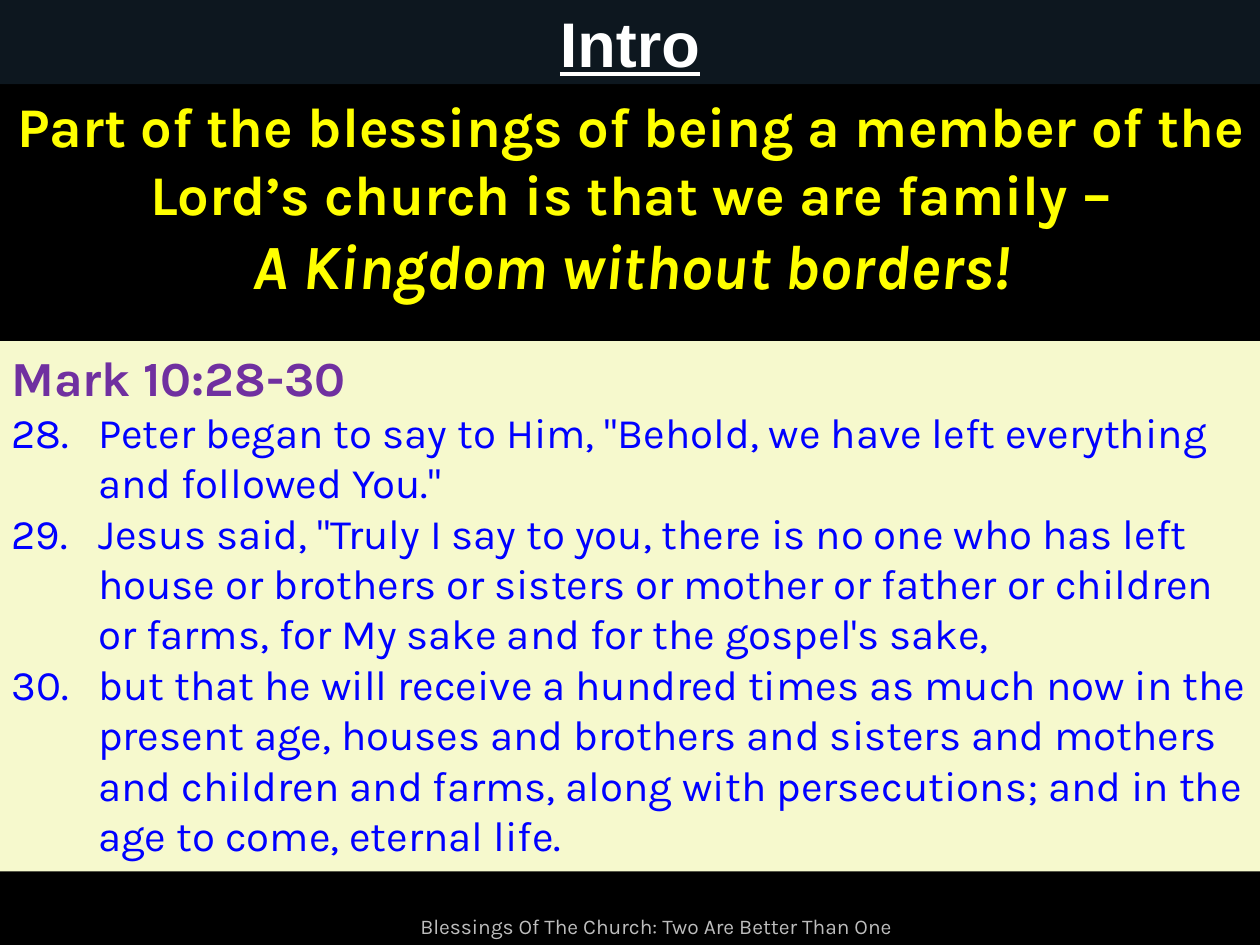
import pptx
import pptx.dml.color
import pptx.enum.shapes
import pptx.enum.text
import pptx.util
from pptx.util import Cm

ALIGN = pptx.enum.text.PP_ALIGN
ANCHOR = pptx.enum.text.MSO_ANCHOR

WIDTH, HEIGHT = 25.4, 19.05
YELLOW, PURPLE, BLUE = "FFFF00", "7030A0", "0000FF"

TITLE = "Intro"
MESSAGE = [
    ("Part of the blessings of being a member of the Lord’s church is that we are family –", 32, False),
    ("A Kingdom without borders!", 36, True),
]
PASSAGE = "Mark 10:28-30"
VERSES = [
    (28, "Peter began to say to Him, \"Behold, we have left everything and followed You.\""),
    (29, "Jesus said, \"Truly I say to you, there is no one who has left house or brothers "
         "or sisters or mother or father or children or farms, for My sake and for the gospel's sake,"),
    (30, "but that he will receive a hundred times as much now in the present age, houses "
         "and brothers and sisters and mothers and children and farms, along with persecutions; "
         "and in the age to come, eternal life."),
]
FOOTER = "Blessings Of The Church: Two Are Better Than One"


def paint(target, color):
    target.solid()
    target.fore_color.rgb = pptx.dml.color.RGBColor.from_string(color)


def add_box(page, left, top, width, height, fill=None, anchor=ANCHOR.TOP):
    place = [Cm(length) for length in (left, top, width, height)]
    if fill:
        box = page.shapes.add_shape(pptx.enum.shapes.MSO_SHAPE.RECTANGLE, *place)
        box.shadow.inherit = False
        paint(box.fill, fill)
        box.line.fill.background()
    else:
        box = page.shapes.add_textbox(*place)
    box.text_frame.word_wrap = True
    box.text_frame.vertical_anchor = anchor
    return box


def add_text(box, text, size, color, font="Karla", bold=False, italic=False,
             underline=False, align=ALIGN.CENTER, hanging=0):
    frame = box.text_frame
    para = frame.add_paragraph() if frame.text else frame.paragraphs[0]
    para.alignment = align
    if hanging:
        properties = para._p.get_or_add_pPr()
        properties.set("marL", str(Cm(hanging)))
        properties.set("indent", str(-Cm(hanging)))
    span = para.add_run()
    span.text = text
    span.font.name = font
    span.font.size = pptx.util.Pt(size)
    span.font.bold = bold
    span.font.italic = italic
    span.font.underline = underline
    paint(span.font.fill, color)


def main():
    deck = pptx.Presentation()
    deck.slide_width, deck.slide_height = Cm(WIDTH), Cm(HEIGHT)
    page = deck.slides.add_slide(deck.slide_layouts[6])
    paint(page.background.fill, "000000")

    footer = add_box(page, 8.05, 18.21, 10.36, 0.84, anchor=ANCHOR.BOTTOM)
    add_text(footer, FOOTER, 12, "BDBDBD")

    title = add_box(page, 0, 0, WIDTH, 1.7, fill="0D171F", anchor=ANCHOR.MIDDLE)
    add_text(title, TITLE, 36, "FFFFFF", font="Arial", bold=True, underline=True)

    message = add_box(page, 0.03, 1.73, WIDTH, 4.52)
    for text, size, italic in MESSAGE:
        add_text(message, text, size, YELLOW, bold=True, italic=italic)

    scripture = add_box(page, -0.02, 6.88, WIDTH + 0.02, 10.69, fill="F6F9CD")
    add_text(scripture, PASSAGE, 28, PURPLE, bold=True, align=ALIGN.LEFT, hanging=1.27)
    for number, verse in VERSES:
        add_text(scripture, f"{number}.\t{verse}", 24, BLUE, align=ALIGN.LEFT, hanging=1.75)

    deck.save("out.pptx")


if __name__ == "__main__":
    main()
